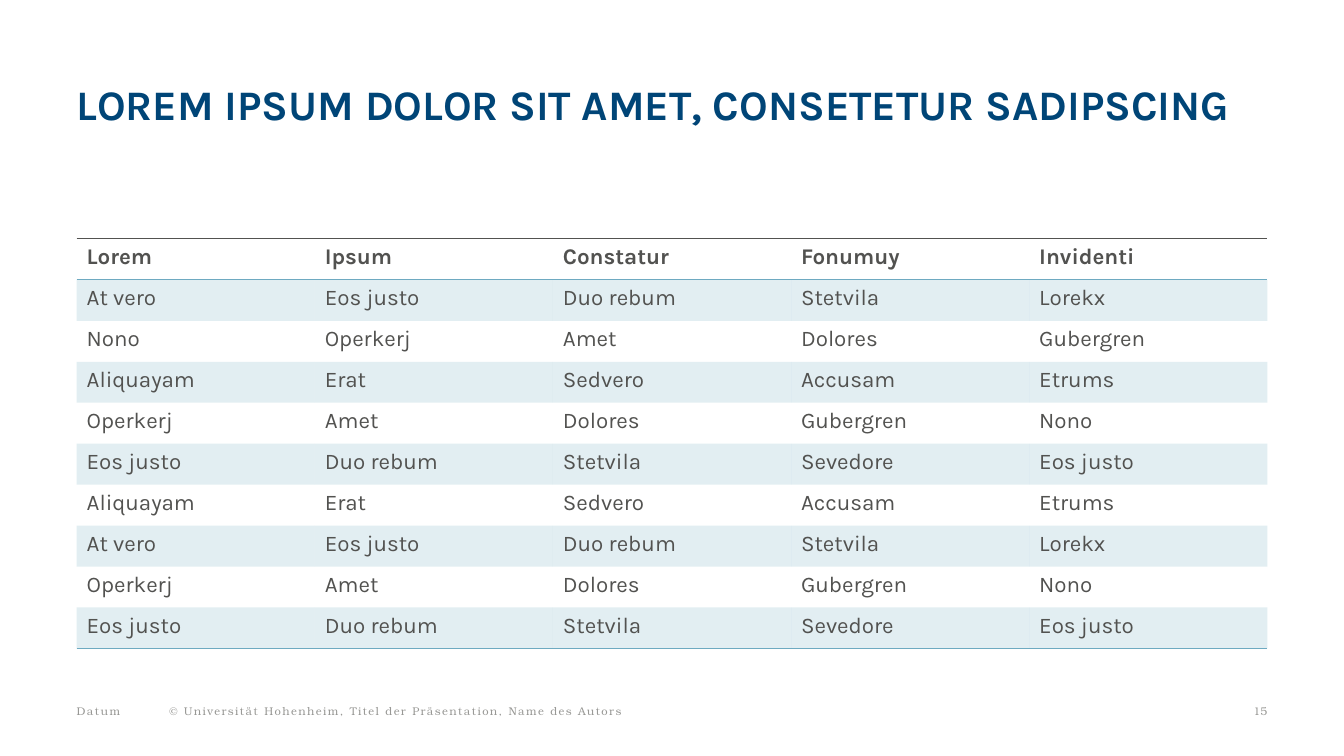
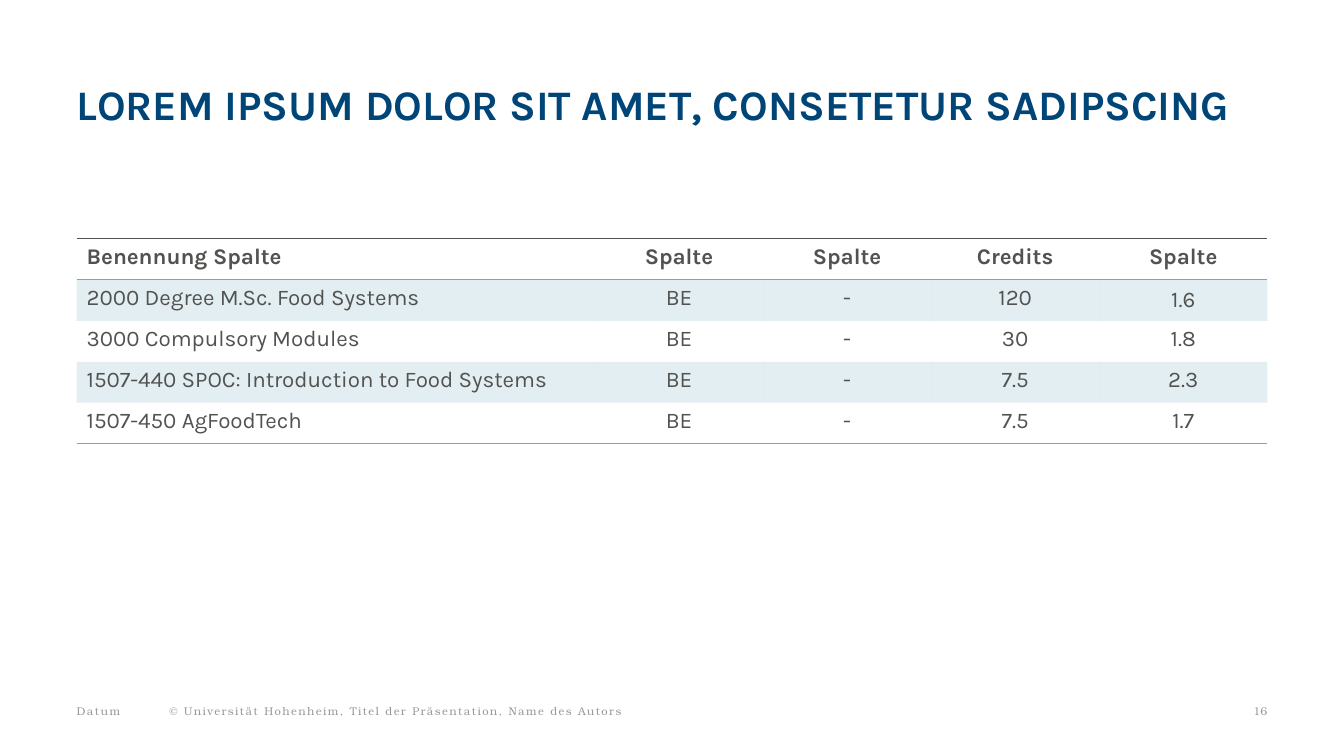
from dataclasses import dataclass
from lxml import etree
from pptx import Presentation
from pptx.dml.color import RGBColor
from pptx.enum.text import MSO_ANCHOR, PP_ALIGN
from pptx.oxml.ns import qn
from pptx.util import Inches, Pt

LEFT, MID, RIGHT = PP_ALIGN.LEFT, PP_ALIGN.CENTER, PP_ALIGN.RIGHT
TOP, CENTER = MSO_ANCHOR.TOP, MSO_ANCHOR.MIDDLE


@dataclass(frozen=True)
class Theme:
    navy: str = "004577"
    ink: str = "525250"
    teal: str = "6EAAC1"
    gray: str = "989895"
    sans: str = "Karla"
    serif: str = "TeX Gyre Bonum"
    head: int = 30
    body: int = 16
    small: int = 8
    tint: int = 20
    rule: int = 1


def write(frame, text, *, size, font, color, bold=False, align=LEFT, track=0, lead=None):
    para = frame.paragraphs[0]
    para.alignment = align
    if lead:
        para.line_spacing = lead
    run = para.add_run()
    run.text = text
    run.font.size = Pt(size)
    run.font.name = font
    run.font.bold = bold
    run.font.color.rgb = RGBColor.from_string(color)
    if track:
        run._r.get_or_add_rPr().set("spc", str(track * 100))


def tint(node, color, alpha=100):
    fill = etree.SubElement(node, qn("a:solidFill"))
    tone = etree.SubElement(fill, qn("a:srgbClr"), val=color)
    if alpha < 100:
        etree.SubElement(tone, qn("a:alpha"), val=str(alpha * 1000))


class Deck:
    SIDE, WIDE = 5.7, 88.6

    def __init__(self, theme):
        self.theme = theme
        self.deck = Presentation()
        self.deck.slide_width = Inches(13.33)
        self.deck.slide_height = Inches(7.5)
        self.slide = None

    def across(self, share):
        return round(self.deck.slide_width * share / 100)

    def down(self, share):
        return round(self.deck.slide_height * share / 100)

    def page(self, title, number):
        look = self.theme
        self.slide = self.deck.slides.add_slide(self.deck.slide_layouts[6])
        self.text(title, self.SIDE, 11.2, self.WIDE, 15.2, size=look.head,
                  font=look.sans, color=look.navy, bold=True, lead=0.9)
        self.foot("© Universität Hohenheim, Titel der Präsentation, Name des Autors",
                  12.6, 74, track=1)
        self.foot("Datum", self.SIDE, 6, track=1)
        self.foot(str(number), 87.4, 6.9, align=RIGHT)

    def text(self, text, x, y, w, h, **form):
        box = self.slide.shapes.add_textbox(
            self.across(x), self.down(y), self.across(w), self.down(h))
        frame = box.text_frame
        frame.word_wrap = True
        frame.margin_left = frame.margin_right = 0
        frame.margin_top = frame.margin_bottom = 0
        write(frame, text, **form)

    def foot(self, text, x, w, **form):
        look = self.theme
        self.text(text, x, 93.2, w, 1.73, size=look.small,
                  font=look.serif, color=look.gray, **form)

    def edge(self, cell, side, color):
        line = etree.SubElement(cell._tc.get_or_add_tcPr(), qn("a:ln" + side))
        if color:
            line.set("w", str(Pt(self.theme.rule)))
            tint(line, color)
        else:
            line.set("w", "0")
            etree.SubElement(line, qn("a:noFill"))

    def table(self, rows, parts, align=LEFT, middle=()):
        look, high = self.theme, self.down(5.42)
        wide = self.across(self.WIDE)
        grid = self.slide.shapes.add_table(
            len(rows), len(parts), self.across(self.SIDE), self.down(31.6),
            wide, high * len(rows)).table
        grid.first_row = grid.horz_banding = False
        for col, part in zip(grid.columns, parts):
            col.width = round(wide * part / sum(parts))
        rules = {0: look.ink, 1: look.teal, len(rows): look.teal}
        for r, row in enumerate(rows):
            grid.rows[r].height = high
            for c, text in enumerate(row):
                cell = grid.cell(r, c)
                cell.vertical_anchor = CENTER if (r, c) in middle else TOP
                for side, color in (("L", None), ("R", None),
                                    ("T", rules.get(r)), ("B", rules.get(r + 1))):
                    self.edge(cell, side, color)
                if r % 2:
                    tint(cell._tc.get_or_add_tcPr(), look.teal, look.tint)
                else:
                    cell.fill.background()
                write(cell.text_frame, text, size=look.body, font=look.sans,
                      color=look.ink, bold=r == 0, align=align if c else LEFT)


def main():
    deck = Deck(Theme())
    title = "LOREM IPSUM DOLOR SIT AMET, CONSETETUR SADIPSCING"

    vero = ("At vero", "Eos justo", "Duo rebum", "Stetvila", "Lorekx")
    erat = ("Aliquayam", "Erat", "Sedvero", "Accusam", "Etrums")
    amet = ("Operkerj", "Amet", "Dolores", "Gubergren", "Nono")
    justo = ("Eos justo", "Duo rebum", "Stetvila", "Sevedore", "Eos justo")
    deck.page(title, 15)
    deck.table([
        ("Lorem", "Ipsum", "Constatur", "Fonumuy", "Invidenti"),
        vero,
        ("Nono", "Operkerj", "Amet", "Dolores", "Gubergren"),
        erat, amet, justo, erat, vero, amet, justo,
    ], [1] * 5)

    deck.page(title, 16)
    deck.table([
        ("Benennung Spalte", "Spalte", "Spalte", "Credits", "Spalte"),
        ("2000 Degree M.Sc. Food Systems", "BE", "-", "120", "1.6"),
        ("3000 Compulsory Modules", "BE", "-", "30", "1.8"),
        ("1507-440 SPOC: Introduction to Food Systems", "BE", "-", "7.5", "2.3"),
        ("1507-450 AgFoodTech", "BE", "-", "7.5", "1.7"),
    ], [5.15] + [1.67] * 4, align=MID, middle={(1, 4)})

    deck.deck.save("out.pptx")


if __name__ == "__main__":
    main()
